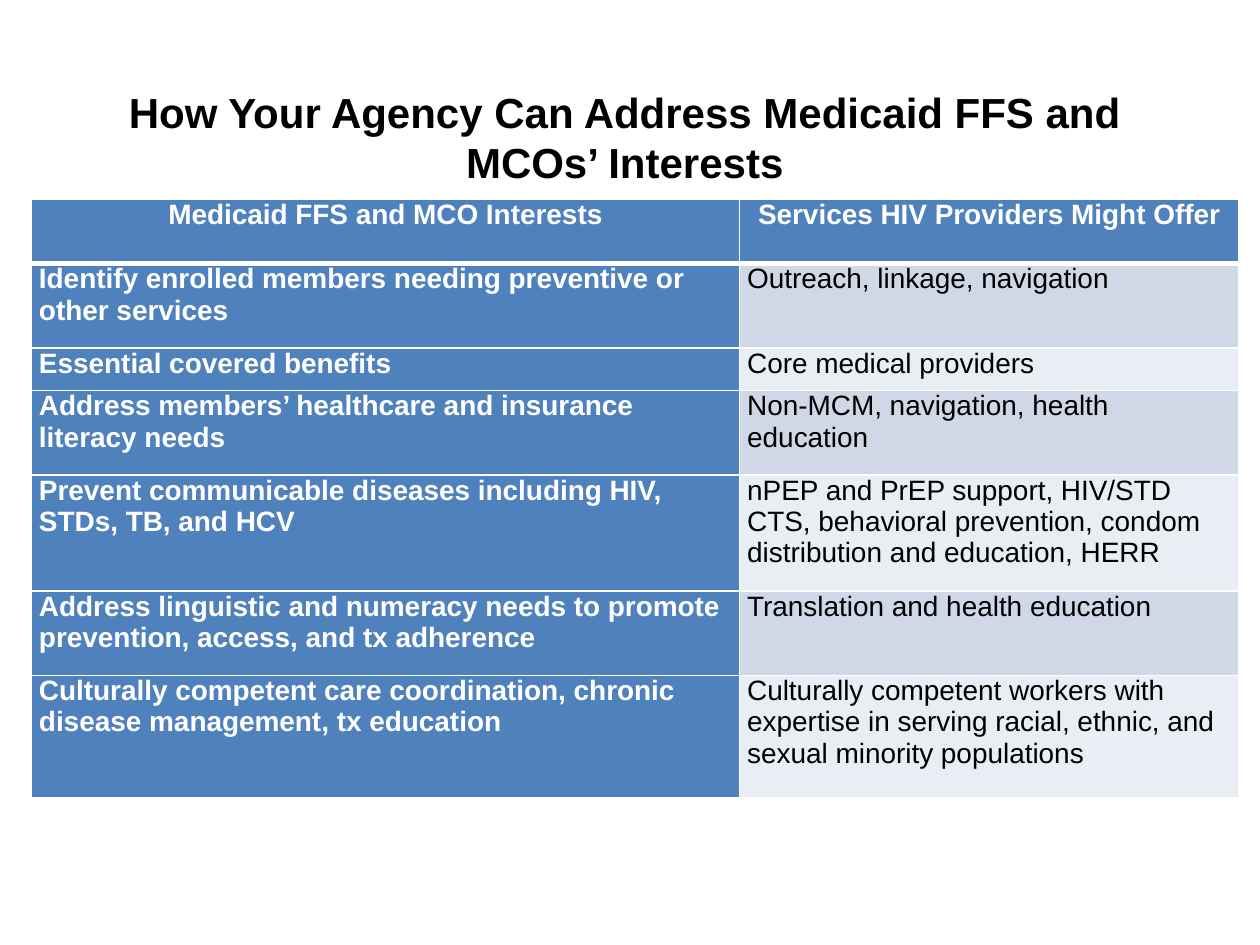
"""Build a slide matching Medicaid payer interests to HIV provider services."""
from lxml import etree
from pptx import Presentation, util as u
from pptx.dml.color import RGBColor
from pptx.enum import text
from pptx.oxml.ns import qn

Pt = u.Pt
COLORS = {"blue": "4F81BD", "band": "D0D8E8", "pale": "E9EDF4",
          "white": "FFFFFF", "black": "000000"}
ROWS = [
    (36.7, "Medicaid FFS and MCO Interests", "Services HIV Providers Might Offer"),
    (48.3, "Identify enrolled members needing preventive or other services",
     "Outreach, linkage, navigation"),
    (24.3, "Essential covered benefits", "Core medical providers"),
    (48.3, "Address members’ healthcare and insurance literacy needs",
     "Non-MCM, navigation, health education"),
    (66.3, "Prevent communicable diseases including HIV, STDs, TB, and HCV",
     "nPEP and PrEP support, HIV/STD CTS, behavioral prevention, "
     "condom distribution and education, HERR"),
    (48.3, "Address linguistic and numeracy needs to promote prevention, access, "
     "and tx adherence", "Translation and health education"),
    (69.8, "Culturally competent care coordination, chronic disease management, "
     "tx education",
     "Culturally competent workers with expertise in serving racial, ethnic, "
     "and sexual minority populations"),
]


def write(tf, words, size, color, bold, align):
    tf.text = words
    p = tf.paragraphs[0]
    p.alignment = align
    f = p.runs[0].font
    f.name, f.size, f.bold = "Arial", Pt(size), bold
    f.color.rgb = RGBColor.from_string(COLORS[color])


def add_borders(cell, widths):
    tcPr = cell._tc.get_or_add_tcPr()
    for i, (side, width) in enumerate(zip("LRTB", widths)):
        ln = etree.Element(qn(f"a:ln{side}"), w=str(Pt(width)))
        fill = etree.SubElement(ln, qn("a:solidFill"))
        etree.SubElement(fill, qn("a:srgbClr"), val=COLORS["white"])
        tcPr.insert(i, ln)


prs = Presentation()
prs.slide_width, prs.slide_height = Pt(720), Pt(540)
s = prs.slides.add_slide(prs.slide_layouts[5])

title = s.shapes.title
title.left, title.top, title.width, title.height = Pt(36), Pt(42), Pt(642), Pt(72)
tf = title.text_frame
tf.word_wrap = True
tf.auto_size = text.MSO_AUTO_SIZE.NONE
tf.vertical_anchor = text.MSO_ANCHOR.MIDDLE
write(tf, "How Your Agency Can Address Medicaid FFS and MCOs’ Interests",
      24, "black", True, text.PP_ALIGN.CENTER)

tbl = s.shapes.add_table(len(ROWS), 2, Pt(18), Pt(114), Pt(690), Pt(342)).table
tbl.columns[0].width, tbl.columns[1].width = Pt(404.7), Pt(285.3)
tbl.first_col = True

for i, (height, *words) in enumerate(ROWS):
    tbl.rows[i].height = Pt(height)
    header = i == 0
    for j, word in enumerate(words):
        cell = tbl.cell(i, j)
        strong = header or j == 0
        cell.margin_left = cell.margin_right = Pt(4.3)
        cell.margin_top = cell.margin_bottom = 0
        cell.fill.solid()
        fill = "blue" if strong else ("band" if i % 2 else "pale")
        cell.fill.fore_color.rgb = RGBColor.from_string(COLORS[fill])
        write(cell.text_frame, word, 16, "white" if strong else "black", strong,
              text.PP_ALIGN.CENTER if header else text.PP_ALIGN.LEFT)
        add_borders(cell, (1, 1, 3 if i == 1 else 1, 3 if header else 1))

prs.save("out.pptx")
